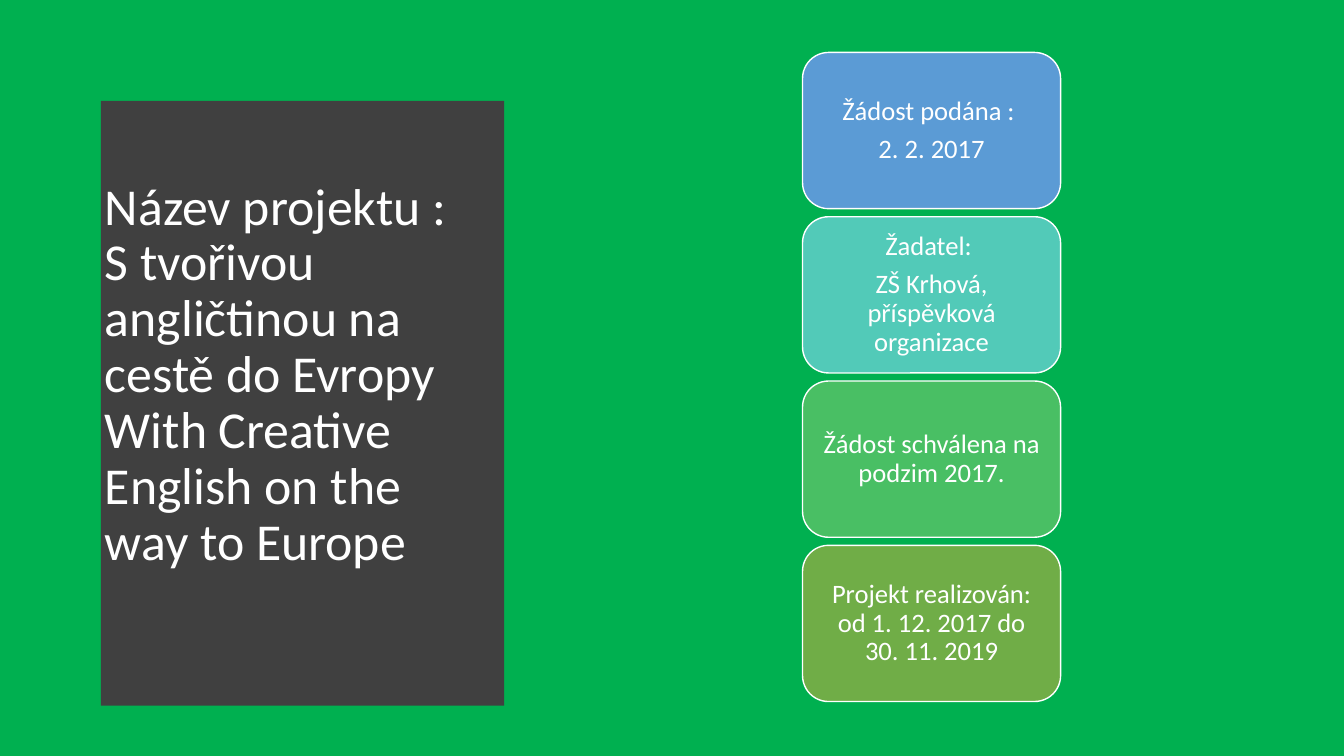
import pptx
import pptx.util
import pptx.dml.color
import pptx.enum.shapes
import pptx.enum.text

Inches = pptx.util.Inches
Pt = pptx.util.Pt
Align = pptx.enum.text.PP_ALIGN

HUES = {
    "back": "00B050", "panel": "404040", "white": "FFFFFF",
    "blue": "5B9BD5", "teal": "52CAB8", "green": "49BF64", "olive": "70AD47",
}
CURVE = [
    (5.08, 0.52), (5.11, 0.74), (5.16, 1.04), (5.2, 1.34), (5.23, 1.64),
    (5.26, 1.94), (5.28, 2.24), (5.3, 2.53), (5.31, 2.97), (5.32, 3.25),
    (5.32, 3.94), (5.31, 4.33), (5.29, 4.71), (5.27, 5.18), (5.23, 5.61),
    (5.2, 5.99), (5.16, 6.33), (5.13, 6.61), (5.1, 6.82), (5.08, 6.96),
]
TITLE = ("Název projektu : \vS tvořivou angličtinou na cestě do Evropy\v"
         "With Creative English on the way to Europe")
CARDS = [
    ("blue", ["Žádost podána : ", "2. 2. 2017"]),
    ("teal", ["Žadatel: ", "ZŠ Krhová, příspěvková organizace"]),
    ("green", ["Žádost schválena na podzim 2017."]),
    ("olive", ["Projekt realizován: od 1. 12. 2017 do 30. 11. 2019"]),
]
HIGH, GAP = 1.55, 0.08


class Deck:
    """Holds the style and the current slide."""

    def __init__(self, slide):
        self.slide = slide
        self.font = "Calibri"
        self.fill(slide.background, "back")

    def hue(self, name):
        return pptx.dml.color.RGBColor.from_string(HUES[name])

    def fill(self, item, name):
        item.fill.solid()
        item.fill.fore_color.rgb = self.hue(name)

    def text(self, frame, lines, size, align):
        frame.word_wrap = True
        frame.auto_size = pptx.enum.text.MSO_AUTO_SIZE.NONE
        frame.vertical_anchor = pptx.enum.text.MSO_ANCHOR.MIDDLE
        frame.text = "\n".join(lines)
        for para in frame.paragraphs:
            para.alignment = align
            para.line_spacing = 0.9
            for run in para.runs:
                run.font.name = self.font
                run.font.size = Pt(size)
                run.font.color.rgb = self.hue("white")
        for para in frame.paragraphs[:-1]:
            para.space_after = Pt(0.35 * size)

    def panel(self, left, curve):
        top, base = curve[0][1], curve[-1][1]
        pen = self.slide.shapes.build_freeform(left, top, scale=Inches(1))
        pen.add_line_segments(curve + [(left, base)], close=True)
        shape = pen.convert_to_shape()
        shape.shadow.inherit = False
        self.fill(shape, "panel")
        shape.line.fill.background()

    def title(self, text, left, top, width, height):
        box = self.slide.shapes.title
        box.left, box.top = Inches(left), Inches(top)
        box.width, box.height = Inches(width), Inches(height)
        self.text(box.text_frame, [text], 37, Align.LEFT)
        box.element.getparent().append(box.element)

    def card(self, name, lines, left, top, width, height):
        shape = self.slide.shapes.add_shape(
            pptx.enum.shapes.MSO_SHAPE.ROUNDED_RECTANGLE,
            Inches(left), Inches(top), Inches(width), Inches(height))
        shape.shadow.inherit = False
        self.fill(shape, name)
        shape.line.color.rgb = self.hue("white")
        shape.line.width = Pt(1)
        frame = shape.text_frame
        frame.margin_left = frame.margin_right = Inches(0.08)
        frame.margin_top = frame.margin_bottom = Inches(0.04)
        self.text(frame, lines, 19, Align.CENTER)


def main():
    show = pptx.Presentation()
    show.slide_width, show.slide_height = Inches(13.33), Inches(7.5)
    deck = Deck(show.slides.add_slide(show.slide_layouts[5]))
    deck.panel(0.53, CURVE)
    deck.title(TITLE, 0.94, 1.11, 3.74, 5.24)
    for row, (name, lines) in enumerate(CARDS):
        deck.card(name, lines, 7.96, 0.52 + (HIGH + GAP) * row, 2.56, HIGH)
    show.save("out.pptx")


if __name__ == "__main__":
    main()
